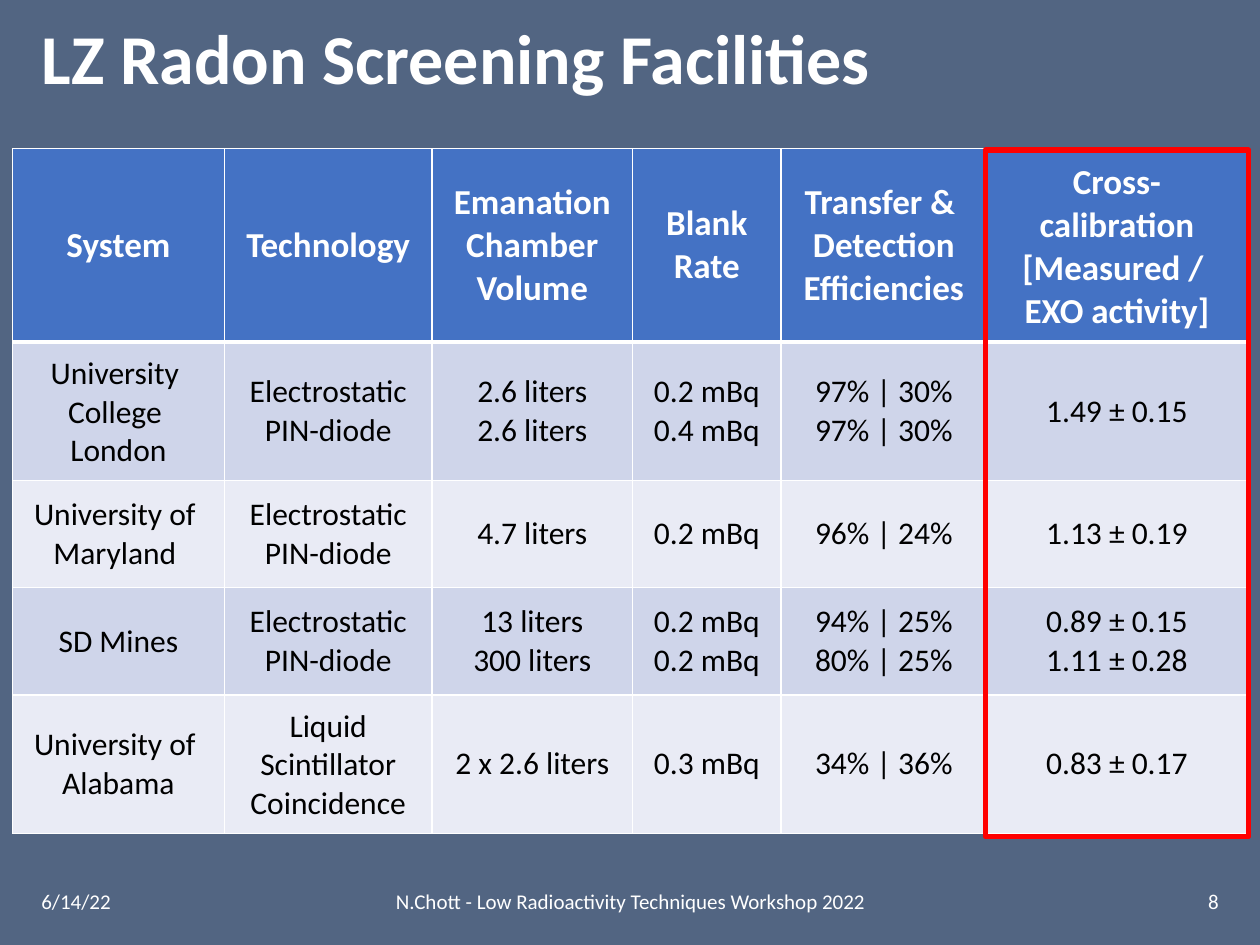
from dataclasses import dataclass

from lxml import etree
from pptx import Presentation
from pptx import util as u
from pptx.dml.color import RGBColor
from pptx.enum import shapes, text
from pptx.oxml.ns import qn


@dataclass(frozen=True)
class Theme:
    font: str = "Calibri"
    background: str = "526582"
    light: str = "FFFFFF"
    dark: str = "000000"
    header: str = "4472C4"
    bands: tuple = ("CFD5EA", "E9EBF5")
    highlight: str = "FF0000"
    title_size: int = 40
    header_size: int = 20
    body_size: int = 18
    footer_size: int = 12
    thin: int = 1
    thick: int = 3


THEME = Theme()
ALIGN = text.PP_ALIGN
MIDDLE = text.MSO_ANCHOR.MIDDLE

MARGIN = 0.23
FOOTER_TOP, FOOTER_HEIGHT = 6.95, 0.4
TABLE_LEFT, TABLE_TOP, TABLE_HEIGHT = 0.1, 1.18, 5.46
COLUMN_WIDTHS = (1.68, 1.65, 1.59, 1.18, 1.63, 2.07)
ROW_HEIGHT = 0.85  # minimum; rows grow to fit their text

PIN_DIODE = "Electrostatic\nPIN-diode"
ROWS = (
    ("System", "Technology", "Emanation\nChamber\nVolume", "Blank\nRate",
     "Transfer & \nDetection\nEfficiencies",
     "Cross-calibration\n[Measured / \nEXO activity]"),
    ("University \nCollege \nLondon", PIN_DIODE, "2.6 liters\n2.6 liters",
     "0.2 mBq\n0.4 mBq", "97% | 30%\n97% | 30%", "1.49 ± 0.15"),
    ("University of \nMaryland ", PIN_DIODE, "4.7 liters",
     "0.2 mBq", "96% | 24%", "1.13 ± 0.19"),
    ("SD Mines", PIN_DIODE, "13 liters\n300 liters",
     "0.2 mBq\n0.2 mBq", "94% | 25%\n80% | 25%", "0.89 ± 0.15\n1.11 ± 0.28"),
    ("University of \nAlabama", "Liquid\nScintillator\nCoincidence",
     "2 x 2.6 liters", "0.3 mBq", "34% | 36%", "0.83 ± 0.17"),
)


def inches(*lengths):
    return [u.Inches(length) for length in lengths]


def apply(target, formats):
    for name, value in formats.items():
        setattr(target, name, value)


def paint(fill, color):
    fill.solid()
    fill.fore_color.rgb = RGBColor.from_string(color)


def write(frame, words, size, color, align, bold=False):
    """Fill the first paragraph; newlines become line breaks."""
    para = frame.paragraphs[0]
    apply(para, {"text": words, "alignment": align})
    for span in para.runs:
        apply(span.font, {"name": THEME.font, "size": u.Pt(size), "bold": bold})
        span.font.color.rgb = RGBColor.from_string(color)
    return para


def add_title(page, words):
    title = page.shapes.title
    left, top, width, height = inches(MARGIN, 0.12, 9.55, 0.74)
    apply(title, {"left": left, "top": top, "width": width, "height": height})
    apply(title.text_frame, {"vertical_anchor": MIDDLE, "word_wrap": True,
                             "auto_size": text.MSO_AUTO_SIZE.NONE})
    para = write(title.text_frame, words, THEME.title_size, THEME.light,
                 ALIGN.LEFT, bold=True)
    para.line_spacing = 0.9


def add_footer(page, words, left, width, align):
    box = page.shapes.add_textbox(*inches(left, FOOTER_TOP, width, FOOTER_HEIGHT))
    apply(box.text_frame, {"word_wrap": True, "vertical_anchor": MIDDLE})
    write(box.text_frame, words, THEME.footer_size, THEME.light, align)


def add_borders(cell, top, bottom):
    properties = cell._tc.get_or_add_tcPr()
    widths = {"lnL": THEME.thin, "lnR": THEME.thin, "lnT": top, "lnB": bottom}
    for side, width in widths.items():
        line = etree.SubElement(properties, qn(f"a:{side}"), w=str(u.Pt(width)))
        fill = etree.SubElement(line, qn("a:solidFill"))
        etree.SubElement(fill, qn("a:srgbClr"), val=THEME.light)


def format_cell(cell, words, row):
    is_header = row == 0
    side, end = inches(0.14, 0.1)
    apply(cell, {"margin_left": side, "margin_right": side, "margin_top": end,
                 "margin_bottom": end, "vertical_anchor": MIDDLE})
    add_borders(cell, top=THEME.thick if row == 1 else THEME.thin,
                bottom=THEME.thick if is_header else THEME.thin)
    paint(cell.fill, THEME.header if is_header else THEME.bands[(row - 1) % 2])
    write(cell.text_frame, words,
          THEME.header_size if is_header else THEME.body_size,
          THEME.light if is_header else THEME.dark, ALIGN.CENTER, is_header)


def add_facility_table(page):
    frame = page.shapes.add_table(
        len(ROWS), len(COLUMN_WIDTHS),
        *inches(TABLE_LEFT, TABLE_TOP, sum(COLUMN_WIDTHS), TABLE_HEIGHT))
    table = frame.table
    for column, width in zip(table.columns, COLUMN_WIDTHS):
        column.width = u.Inches(width)
    for index, words_in_row in enumerate(ROWS):
        table.rows[index].height = u.Inches(ROW_HEIGHT)
        for column, words in enumerate(words_in_row):
            format_cell(table.cell(index, column), words, index)
    frame.height = u.Inches(TABLE_HEIGHT)


def add_column_highlight(page):
    """Outline the last column of the table."""
    left = TABLE_LEFT + sum(COLUMN_WIDTHS[:-1])
    box = page.shapes.add_shape(
        shapes.MSO_SHAPE.RECTANGLE,
        *inches(left - 0.01, TABLE_TOP + 0.01, COLUMN_WIDTHS[-1] + 0.02,
                TABLE_HEIGHT - 0.01))
    box.shadow.inherit = False
    box.fill.background()
    box.line.color.rgb = RGBColor.from_string(THEME.highlight)
    box.line.width = u.Pt(THEME.thick)


def main():
    deck = Presentation()
    width, height = inches(10, 7.5)
    apply(deck, {"slide_width": width, "slide_height": height})
    page = deck.slides.add_slide(deck.slide_layouts.get_by_name("Title Only"))
    paint(page.background.fill, THEME.background)

    add_title(page, "LZ Radon Screening Facilities")
    add_footer(page, "N.Chott - Low Radioactivity Techniques Workshop 2022",
               2.1, 5.81, ALIGN.CENTER)
    add_footer(page, "6/14/22", MARGIN, 1.68, ALIGN.LEFT)
    add_footer(page, "8", 8.09, 1.68, ALIGN.RIGHT)
    add_facility_table(page)
    add_column_highlight(page)
    deck.save("out.pptx")


if __name__ == "__main__":
    main()
